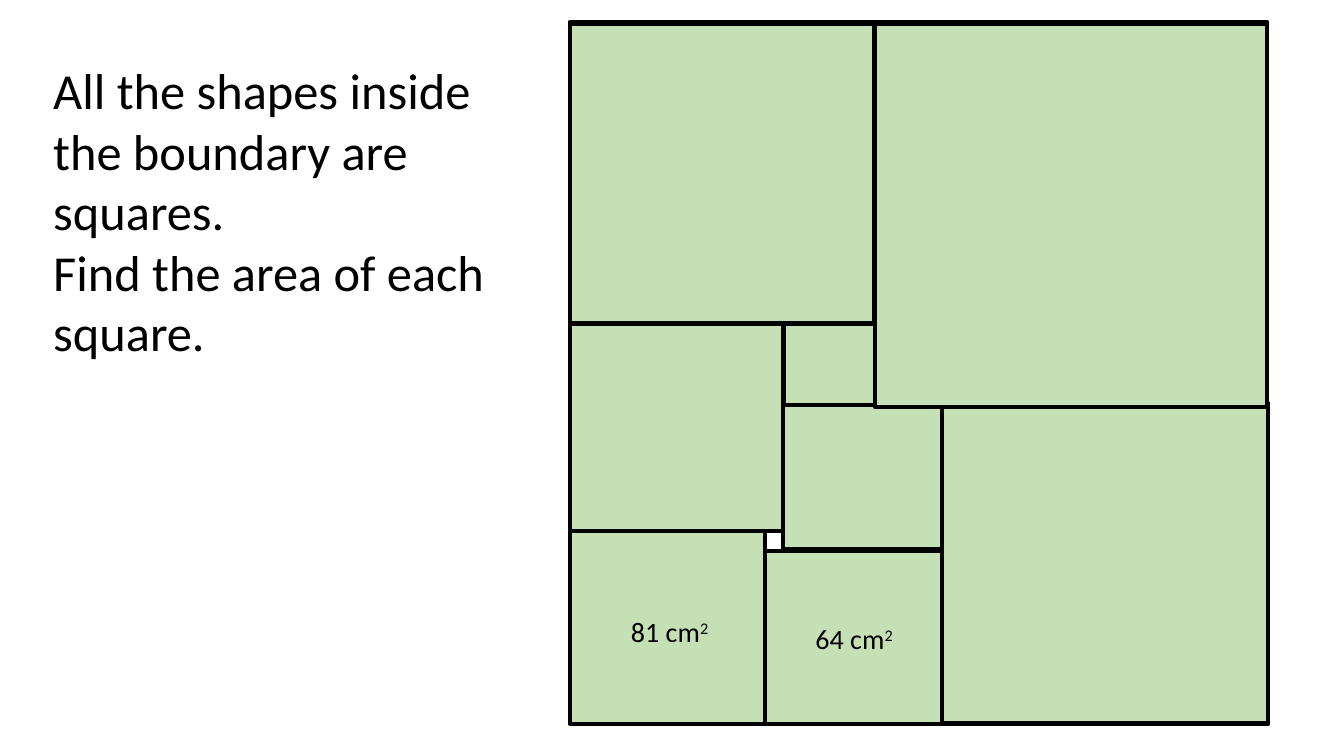
from pptx import Presentation, util as u
from pptx.dml.color import RGBColor
from pptx.enum import shapes, text

PX = 9144  # EMU per px, 100 px to the inch
BLACK = RGBColor(0x00, 0x00, 0x00)
PALE_GREEN = RGBColor(0xC5, 0xE0, 0xB4)
BRIGHT_GREEN = RGBColor(0x99, 0xFF, 0x66)

# Squares relative to the boundary: left, top, width, height
LOWER_SQUARES = [(0, 505, 194, 191), (194, 525, 175, 171)]
LARGE_SQUARES = [(369, 378, 324, 317), (303, 2, 389, 380), (0, 2, 302, 297)]
BACKING_SHIFTS = [1, -2, -2]
MIDDLE_SQUARES = [(0, 297, 212, 208), (212, 297, 92, 86), (212, 380, 157, 143)]
AREAS = [("81 cm", 51, 583), ("64 cm", 234, 590)]


def px(*lengths):
    return [u.Emu(length * PX) for length in lengths]


def add_words(parent, box, paragraphs, size):
    words = parent.add_textbox(*px(*box))
    frame = words.text_frame
    frame.word_wrap = True
    frame.auto_size = text.MSO_AUTO_SIZE.SHAPE_TO_FIT_TEXT
    frame.text = "\n".join(paragraphs)
    for paragraph in frame.paragraphs:
        for run in paragraph.runs:
            style_run(run, size)
    return frame


def style_run(run, size):
    run.font.name = "Calibri"
    run.font.size = u.Pt(size)
    run.font.color.rgb = BLACK


def add_square(parent, origin, square, color):
    left, top, width, height = square
    box = px(origin[0] + left, origin[1] + top, width, height)
    tile = parent.add_shape(shapes.MSO_SHAPE.RECTANGLE, *box)
    tile.shadow.inherit = False
    tile.fill.solid()
    tile.fill.fore_color.rgb = color
    tile.line.color.rgb = BLACK
    tile.line.width = u.Pt(3)


def add_area(parent, box, area):
    frame = add_words(parent, box, [area], 20)
    power = frame.paragraphs[0].add_run()
    power.text = "2"
    style_run(power, 20)
    power._r.get_or_add_rPr().set("baseline", "30000")


def add_puzzle(slide, left, top):
    puzzle = slide.shapes.add_group_shape().shapes
    origin = (left, top)
    # Backing of the large squares, just beyond their edges
    backing = [(x, y + shift, w, h)
               for (x, y, w, h), shift in zip(LARGE_SQUARES, BACKING_SHIFTS)]
    layers = [(LOWER_SQUARES, PALE_GREEN), (backing, BRIGHT_GREEN),
              (MIDDLE_SQUARES + LARGE_SQUARES, PALE_GREEN)]
    for squares, color in layers:
        for square in squares:
            add_square(puzzle, origin, square, color)
    # Known areas
    for area, x, y in AREAS:
        add_area(puzzle, (left + x, top + y, 113, 44), area)


def main():
    deck = Presentation()
    deck.slide_width, deck.slide_height = px(1333, 750)
    slide = deck.slides.add_slide(deck.slide_layouts[6])
    add_puzzle(slide, 565, 22)
    # Question
    add_words(slide.shapes, (43, 54, 453, 313),
              ["All the shapes inside the boundary are squares.",
               "Find the area of each square."], 36)
    deck.save("out.pptx")


if __name__ == "__main__":
    main()
